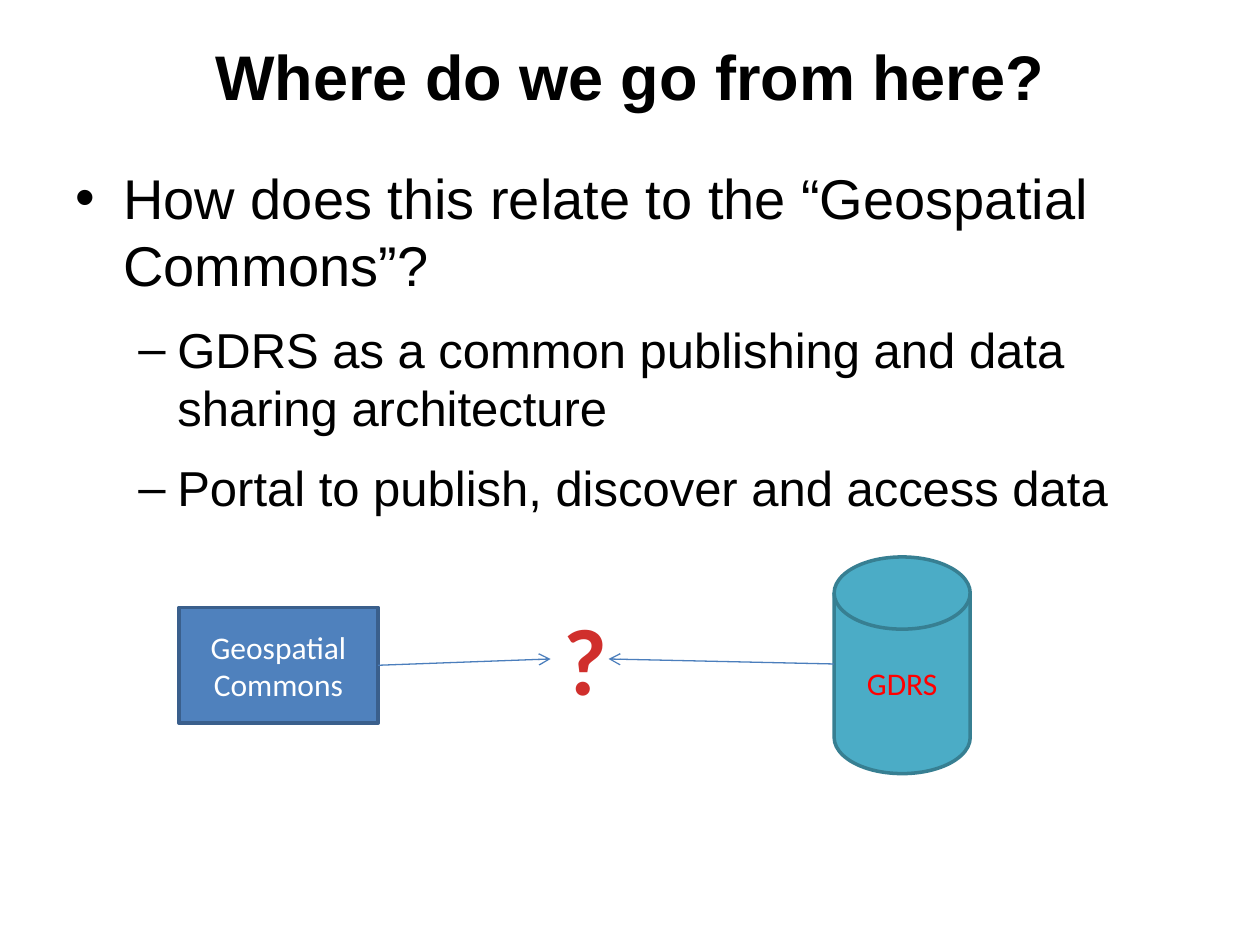
import pptx
import pptx.util
import pptx.dml.color
import pptx.enum.shapes
import pptx.enum.text
import pptx.oxml.ns
import lxml.etree
from dataclasses import dataclass

PX = 9144  # EMU per px, 100 px to the inch


@dataclass
class Theme:
    black: str = "000000"
    white: str = "FFFFFF"
    red: str = "FF0000"
    mark: str = "D02F2C"
    blue: str = "4F81BD"
    navy: str = "3A5F8C"
    teal: str = "4BACC6"
    pine: str = "377F92"
    wire: str = "4B7EBC"
    head: str = "Arial"
    body: str = "Calibri"
    title: int = 36
    main: int = 32
    sub: int = 28
    label: int = 18
    big: int = 54


theme = Theme()
rgb = pptx.dml.color.RGBColor.from_string
qn = pptx.oxml.ns.qn
Kind = pptx.enum.shapes.MSO_SHAPE
Anchor = pptx.enum.text.MSO_ANCHOR
center = pptx.enum.text.PP_ALIGN.CENTER


def style(para, face, size, color, bold=False):
    """Set the font of a whole paragraph."""
    font = para.font
    font.name, font.size, font.bold = face, pptx.util.Pt(size), bold
    font.color.rgb = rgb(color)


def place(*box):
    return [n * PX for n in box]


deck = pptx.Presentation()
deck.slide_width, deck.slide_height = place(1000, 750)
slide = deck.slides.add_slide(deck.slide_layouts[6])
shapes = slide.shapes

# Title
frame = shapes.add_textbox(*place(50, 25, 900, 70)).text_frame
frame.word_wrap = True
frame.vertical_anchor = Anchor.MIDDLE
para = frame.paragraphs[0]
para.text = "Where do we go from here?"
para.alignment = center
style(para, theme.head, theme.title, theme.black, True)

# Bullets: level, text
points = [
    (0, "How does this relate to the “Geospatial Commons”?"),
    (1, "GDRS as a common publishing and data sharing architecture"),
    (1, "Portal to publish, discover and access data"),
]
levels = [("•", 38, 38, theme.main), ("–", 81, 31, theme.sub)]
frame = shapes.add_textbox(*place(50, 125, 900, 545)).text_frame
frame.word_wrap = True
for i, (level, text) in enumerate(points):
    sign, left, hang, size = levels[level]
    para = frame.add_paragraph() if i else frame.paragraphs[0]
    para.text = text
    para.level = level
    if i:
        para.space_before = pptx.util.Pt(12)
    props = para._p.get_or_add_pPr()
    props.set("marL", str(left * PX))
    props.set("indent", str(-hang * PX))
    lxml.etree.SubElement(props, qn("a:buFont")).set("typeface", theme.head)
    lxml.etree.SubElement(props, qn("a:buChar")).set("char", sign)
    style(para, theme.head, size, theme.black)

# Systems: kind, box, fill, line, text, text colour
systems = [
    (Kind.FLOWCHART_MAGNETIC_DISK, (662, 442, 108, 172),
     theme.teal, theme.pine, "GDRS", theme.red),
    (Kind.RECTANGLE, (142, 482, 158, 92),
     theme.blue, theme.navy, "Geospatial Commons", theme.white),
]
nodes = []
for kind, box, fill, edge, text, color in systems:
    node = shapes.add_shape(kind, *place(*box))
    node.shadow.inherit = False
    node.fill.solid()
    node.fill.fore_color.rgb = rgb(fill)
    node.line.color.rgb = rgb(edge)
    node.line.width = pptx.util.Pt(2)
    frame = node.text_frame
    frame.word_wrap = True
    frame.vertical_anchor = Anchor.MIDDLE
    para = frame.paragraphs[0]
    para.text = text
    para.alignment = center
    style(para, theme.body, theme.label, color)
    nodes.append(node)
disk, portal = nodes

# Question mark
frame = shapes.add_textbox(*place(437, 472, 55, 101)).text_frame
frame.word_wrap = False
frame.auto_size = pptx.enum.text.MSO_AUTO_SIZE.SHAPE_TO_FIT_TEXT
para = frame.paragraphs[0]
para.text = "?"
para.alignment = center
style(para, theme.body, theme.big, theme.mark, True)

# Arrows towards the question mark
wires = []
for ends in [(662, 527, 483, 523), (300, 527, 437, 523)]:
    wire = shapes.add_connector(
        pptx.enum.shapes.MSO_CONNECTOR.STRAIGHT, *place(*ends))
    wire.line.color.rgb = rgb(theme.wire)
    wire.line.width = pptx.util.Pt(0.75)
    tip = lxml.etree.SubElement(wire.line._get_or_add_ln(), qn("a:tailEnd"))
    tip.set("type", "arrow")
    lxml.etree.SubElement(wire._element.spPr, qn("a:effectLst"))
    wires.append(wire)
wires[1].begin_connect(portal, 3)

deck.save("out.pptx")
